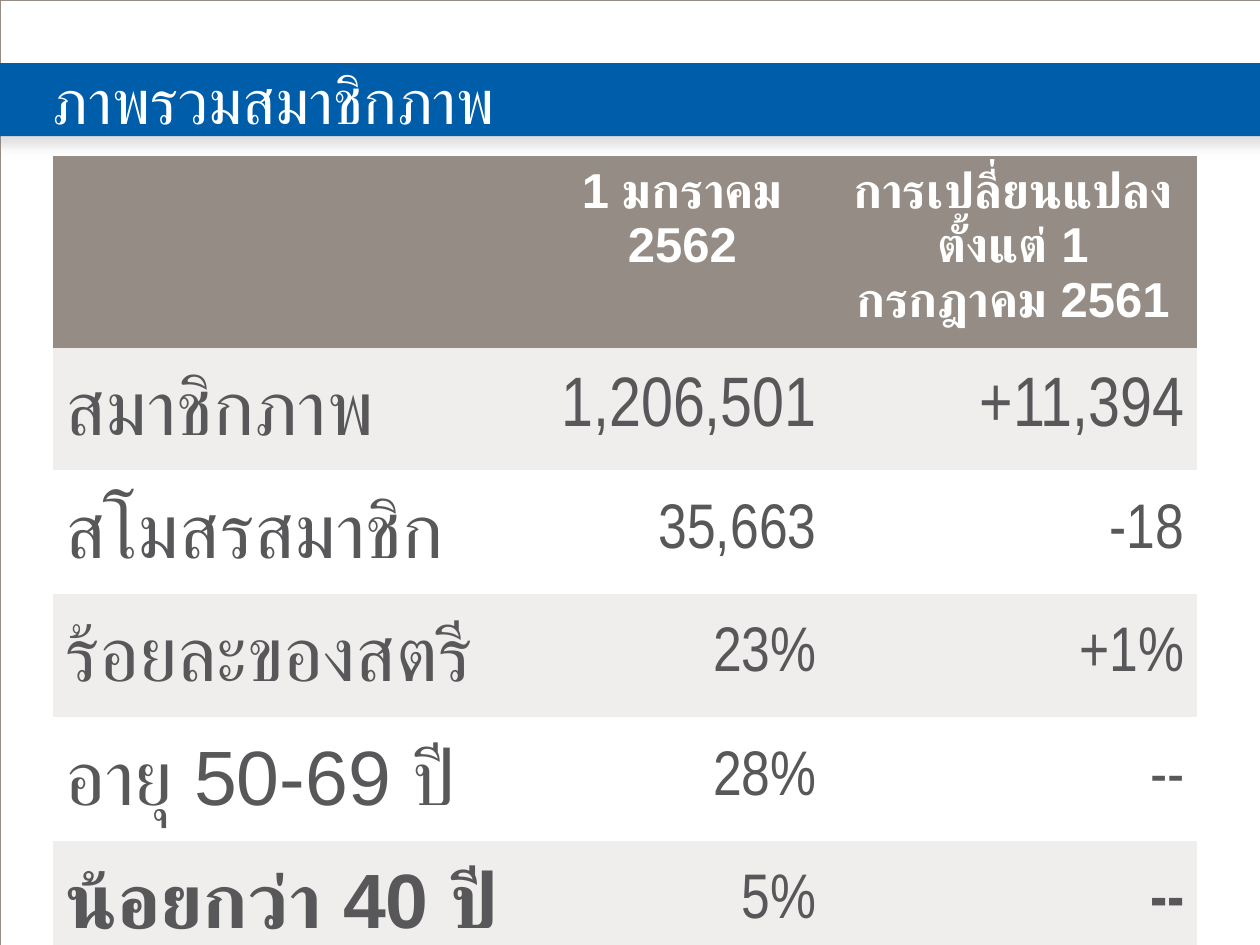
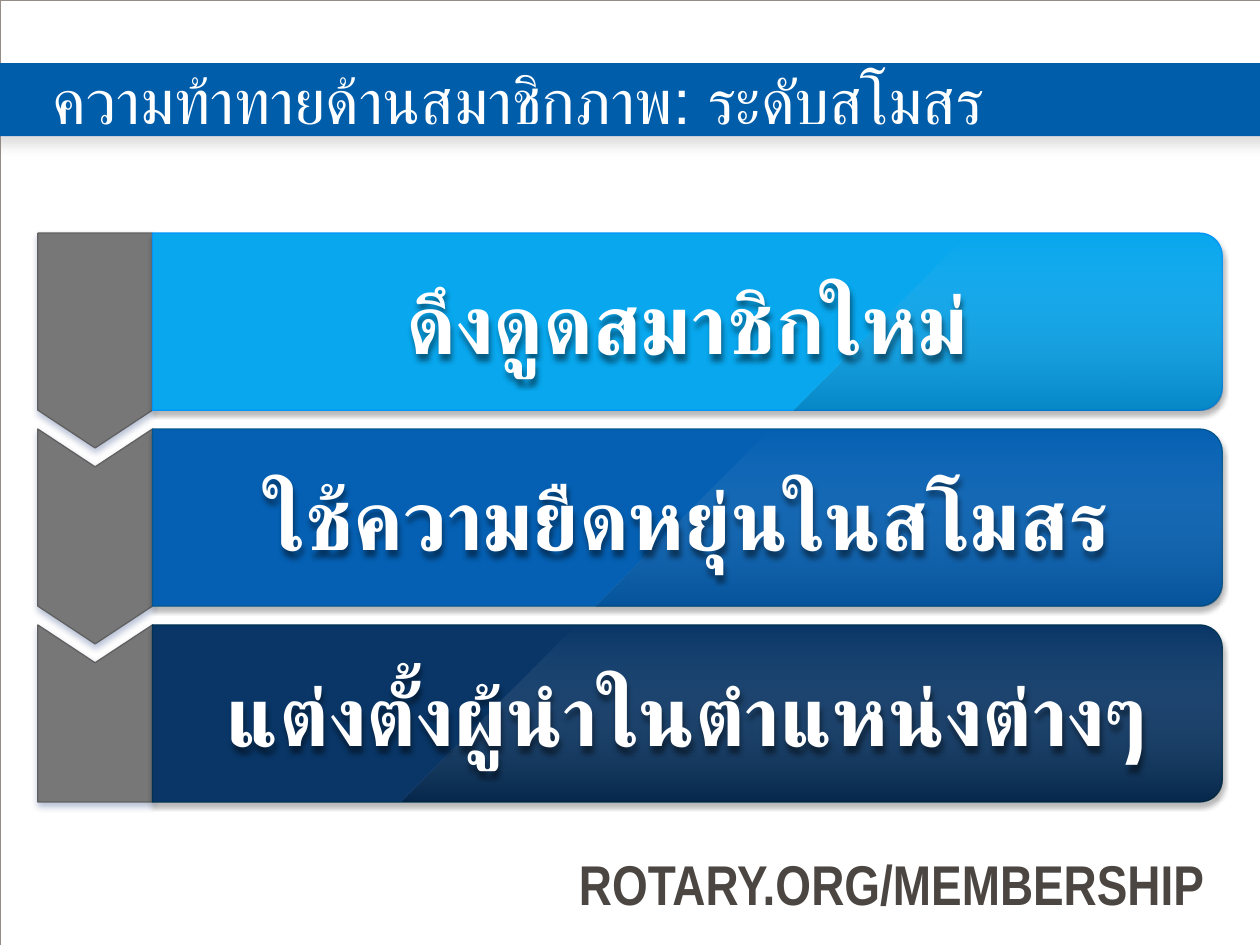
from math import cos, radians, sin

from lxml.etree import SubElement
from pptx import Presentation
from pptx.dml.color import RGBColor
from pptx.enum.shapes import MSO_SHAPE
from pptx.enum.text import MSO_ANCHOR, PP_ALIGN
from pptx.oxml.ns import qn
from pptx.util import Inches, Pt

COLS, ROWS = 100, 75
WHITE, TAUPE, STRIPE, INK = "FFFFFF", "958D85", "EFEEED", "58585A"
BLUE, GREY, GREY_EDGE, FOOTER = "005DAA", "777777", "606060", "4B4642"
SANS, NARROW = "Arial", "Arial Narrow"
NO_GRID = "{2D5ABB26-0587-4C30-8999-92F81FD0307C}"
LEFT, CENTER, RIGHT = PP_ALIGN.LEFT, PP_ALIGN.CENTER, PP_ALIGN.RIGHT
BAND_SHADOW = ("808080", 25, 7, 4.8)
ARROW_SHADOW = ("00246C", 27, 4, 2)
PANEL_SHADOW = ("000000", 27, 3, 2)
TEXT_SHADOW = ("000000", 43, 3, 3)


def rgb(value):
    return RGBColor.from_string(value)


class Deck:
    """Holds the shared style and the current slide, on a grid of 100 columns by 75 rows."""

    def __init__(self):
        self.prs = Presentation()
        self.prs.slide_width, self.prs.slide_height = Inches(10), Inches(7.5)
        self.s = None

    def x(self, cols):
        return round(self.prs.slide_width * cols / COLS)

    def y(self, rows):
        return round(self.prs.slide_height * rows / ROWS)

    def box(self, left, top, width, height):
        return self.x(left), self.y(top), self.x(width), self.y(height)

    def slide(self, title):
        self.s = self.prs.slides.add_slide(self.prs.slide_layouts[6])
        self.rect((0, 0, COLS, ROWS), line=TAUPE, weight=0.13)
        self.rect((-0.8, 5, 101.7, 5.8), fill=BLUE, shadow=BAND_SHADOW)
        self.text((4.2, 5, 95.8, 5.8), title, 36, WHITE, inset=0)

    def rect(self, place, **look):
        sp = self.s.shapes.add_shape(MSO_SHAPE.RECTANGLE, *self.box(*place))
        return self.paint(sp, **look)

    def polygon(self, points, **look):
        points = [(self.x(px), self.y(py)) for px, py in points]
        builder = self.s.shapes.build_freeform(*points[0], scale=1.0)
        builder.add_line_segments(points[1:], close=True)
        return self.paint(builder.convert_to_shape(), **look)

    def paint(self, sp, fill=None, line=None, weight=0.75, shadow=None):
        if fill:
            sp.fill.solid()
            sp.fill.fore_color.rgb = rgb(fill)
        else:
            sp.fill.background()
        if line:
            sp.line.color.rgb, sp.line.width = rgb(line), Pt(weight)
        else:
            sp.line.fill.background()
        self.shade(sp, shadow)
        return sp

    def shade(self, sp, shadow):
        sp.shadow.inherit = False
        if shadow:
            color, opacity, blur, dist = shadow
            effects = sp._element.spPr.find(qn("a:effectLst"))
            outer = SubElement(effects, qn("a:outerShdw"), blurRad=str(Pt(blur)),
                               dist=str(Pt(dist)), dir="5400000", algn="ctr", rotWithShape="0")
            tint = SubElement(outer, qn("a:srgbClr"), val=color)
            SubElement(tint, qn("a:alpha"), val=str(opacity * 1000))

    def gloss(self, points, color, opacity):
        sp = self.polygon(points)
        sp.fill.gradient()
        sp.fill.gradient_angle = 90
        for stop, value, at in zip(sp.fill.gradient_stops, (color, WHITE), (0, 1)):
            stop.color.rgb, stop.position = rgb(value), at
        for tint, alpha in zip(sp._element.spPr.iter(qn("a:srgbClr")), (opacity, 0)):
            SubElement(tint, qn("a:alpha"), val=str(alpha * 1000))

    def fill_text(self, tf, text, size, color, align=LEFT, font=SANS, bold=False):
        p = tf.paragraphs[0]
        p.alignment = align
        r = p.add_run()
        r.text = text
        for key, value in {"size": Pt(size), "name": font, "bold": bold}.items():
            setattr(r.font, key, value)
        r.font.color.rgb = rgb(color)
        SubElement(r._r.get_or_add_rPr(), qn("a:cs"), typeface=font)

    def text(self, place, text, size, color, anchor=MSO_ANCHOR.MIDDLE, inset=None, shadow=None, **style):
        sp = self.s.shapes.add_textbox(*self.box(*place))
        tf = sp.text_frame
        tf.word_wrap, tf.vertical_anchor = True, anchor
        if inset is not None:
            for side in ("left", "top", "right", "bottom"):
                setattr(tf, f"margin_{side}", inset)
        if shadow:
            self.shade(sp, shadow)
        self.fill_text(tf, text, size, color, **style)

    def table(self, place, widths, heights, rows):
        frame = self.s.shapes.add_table(len(rows), len(widths), *self.box(*place))
        table = frame.table
        table.first_row = table.horz_banding = False
        table._tbl.tblPr.find(qn("a:tableStyleId")).text = NO_GRID
        for column, width in zip(table.columns, widths):
            column.width = self.x(width)
        for i, (row, height, cells) in enumerate(zip(table.rows, heights, rows)):
            row.height = self.y(height)
            fill = TAUPE if i == 0 else STRIPE if i % 2 else WHITE
            edges = ("lnT", "lnB") if i == 0 else ("lnB",) if i == len(rows) - 1 else ()
            for cell, content in zip(row.cells, cells):
                self.border(cell, edges)
                cell.fill.solid()
                cell.fill.fore_color.rgb = rgb(fill)
                cell.vertical_anchor = MSO_ANCHOR.MIDDLE if i else MSO_ANCHOR.TOP
                if content:
                    self.fill_text(cell.text_frame, **content)

    def border(self, cell, edges):
        for edge in edges:
            ln = SubElement(cell._tc.get_or_add_tcPr(), qn(f"a:{edge}"), w=str(Pt(2)))
            SubElement(SubElement(ln, qn("a:solidFill")), qn("a:srgbClr"), val=TAUPE)


def rounded_right(left, slant, top, right, height, radius=1.8):
    arc = [(right - radius + radius * sin(radians(a)), radius - radius * cos(radians(a)))
           for a in range(0, 91, 10)]
    return ([(left + slant, top)] + [(px, top + dy) for px, dy in arc]
            + [(px, top + height - dy) for px, dy in reversed(arc)] + [(left, top + height)])


def overview(deck):
    deck.slide("ภาพรวมสมาชิกภาพ")
    heads = ("", "1 มกราคม 2562", "การเปลี่ยนแปลงตั้งแต่ 1 กรกฎาคม 2561")
    figures = [
        ("สมาชิกภาพ", "1,206,501", "+11,394", 40, False),
        ("สโมสรสมาชิก", "35,663", "-18", 36, False),
        ("ร้อยละของสตรี", "23%", "+1%", 36, False),
        ("อายุ 50-69 ปี", "28%", "--", 36, False),
        ("น้อยกว่า 40 ปี", "5%", "--", 36, True),
    ]
    rows = [[dict(text=h, size=28, color=WHITE, align=CENTER, bold=True) if h else None for h in heads]]
    for label, count, change, size, bold in figures:
        number = dict(size=size, color=INK, align=RIGHT, font=NARROW)
        rows.append([dict(text=label, size=44, color=INK, bold=bold),
                     dict(text=count, **number), dict(text=change, bold=bold, **number)])
    deck.table((4.2, 12.5, 90.8, 60.3), (38.3, 23.3, 29.2), [11.1] + [9.8] * 5, rows)


def challenges(deck):
    deck.slide("ความท้าทายด้านสมาชิกภาพ: ระดับสโมสร")
    first, pitch, height, tip = 18.5, 15.55, 14.05, 3
    left, joint, right = 3, 12.1, 97
    middle = (left + joint) / 2
    panels = [
        ("ดึงดูดสมาชิกใหม่", "08A7EE", "0195F9", 62.9, "01315D", 28),
        ("ใช้ความยืดหยุ่นในสโมสร", "0560B3", "01568F", 47.2, "01315D", 28),
        ("แต่งตั้งผู้นำในตำแหน่งต่างๆ", "093667", "013253", 31.8, "000C16", 35),
    ]
    tops = [first + pitch * i for i in range(len(panels))]
    for i, top in reversed(list(enumerate(tops))):
        notch = tip if i else 0
        point = tip if i < len(panels) - 1 else 0
        deck.polygon([(left, top), (middle, top + notch), (joint, top), (joint, top + height),
                      (middle, top + height + point), (left, top + height)],
                     fill=GREY, line=GREY_EDGE, shadow=ARROW_SHADOW)
    for top, (label, fill, edge, shine, tint, opacity) in zip(tops, panels):
        deck.polygon(rounded_right(joint, 0, top, right, height),
                     fill=fill, line=edge, shadow=PANEL_SHADOW)
        deck.gloss(rounded_right(shine, 14, top, right, height), tint, opacity)
        deck.text((joint, top + 2.45, right - joint, 9.1), label, 48, WHITE,
                  align=CENTER, bold=True, shadow=TEXT_SHADOW)
    deck.text((25.8, 66.9, 70.8, 6.4), "ROTARY.ORG/MEMBERSHIP", 32, FOOTER,
              anchor=MSO_ANCHOR.TOP, align=RIGHT, font=NARROW, bold=True)


def main():
    deck = Deck()
    overview(deck)
    challenges(deck)
    deck.prs.save("out.pptx")


if __name__ == "__main__":
    main()
